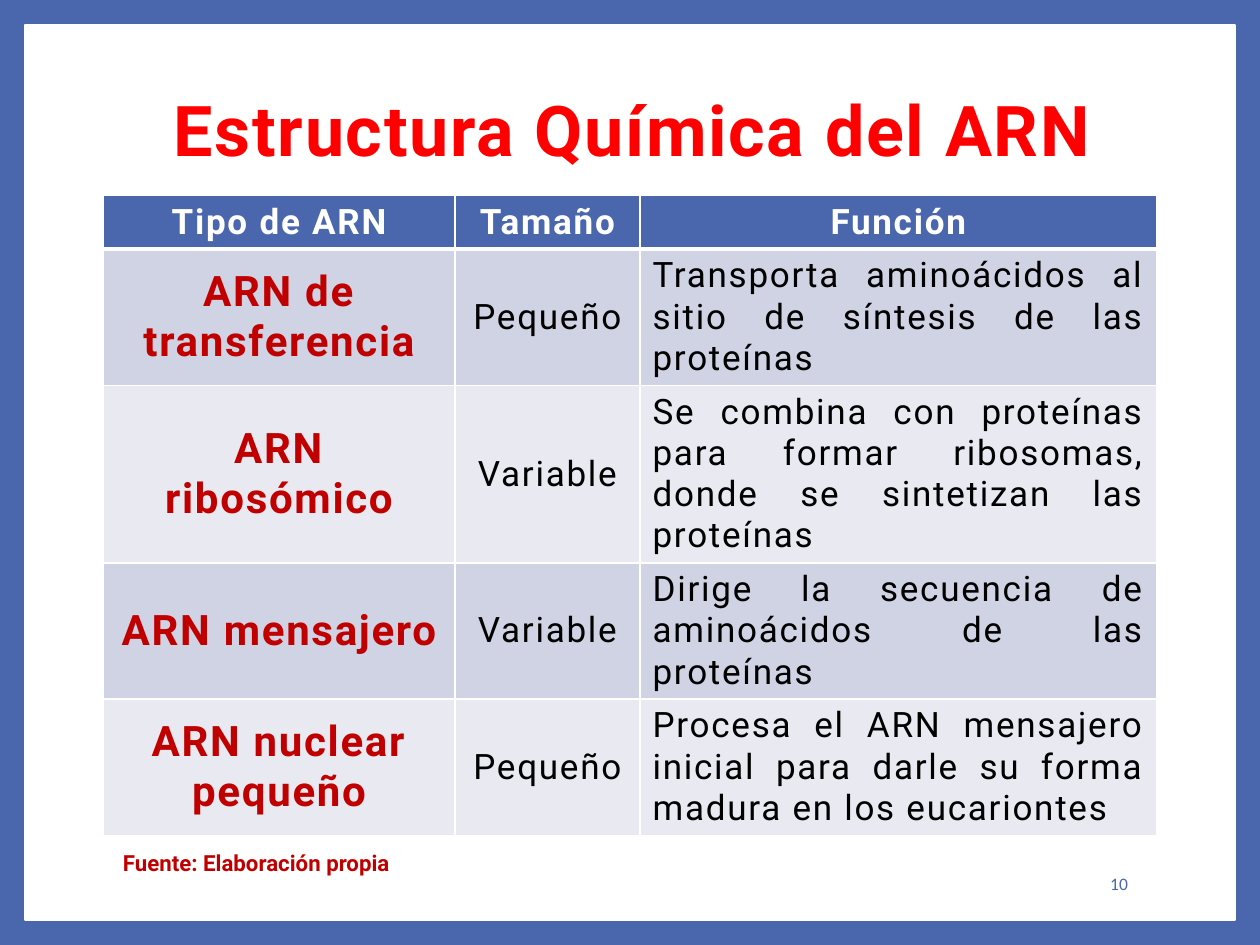
import pptx
import pptx.util
import pptx.dml.color
import pptx.enum.shapes
import pptx.enum.text
import pptx.oxml.ns
from lxml import etree

Inches, Pt = pptx.util.Inches, pptx.util.Pt
RGBColor = pptx.dml.color.RGBColor
ALIGN = pptx.enum.text.PP_ALIGN
ANCHOR = pptx.enum.text.MSO_ANCHOR
qn = pptx.oxml.ns.qn

BLUE = RGBColor(0x4A, 0x66, 0xAC)
WHITE = RGBColor(0xFF, 0xFF, 0xFF)
BLACK = RGBColor(0, 0, 0)
RED = RGBColor(0xFF, 0, 0)
DARK_RED = RGBColor(0xC0, 0, 0)
BANDS = [RGBColor(0xD0, 0xD3, 0xE3), RGBColor(0xE9, 0xEA, 0xF1)]

TITLE = "Estructura Química del ARN"
SOURCE = "Fuente: Elaboración propia"
PAGE_NUMBER = "10"
HEADINGS = ("Tipo de ARN", "Tamaño", "Función")
RNA_TYPES = [
    ("ARN de transferencia", "Pequeño",
     "Transporta aminoácidos al sitio de síntesis de las proteínas"),
    ("ARN ribosómico", "Variable",
     "Se combina con proteínas para formar ribosomas, donde se sintetizan las proteínas"),
    ("ARN mensajero", "Variable",
     "Dirige la secuencia de aminoácidos de las proteínas"),
    ("ARN nuclear pequeño", "Pequeño",
     "Procesa el ARN mensajero inicial para darle su forma madura en los eucariontes"),
]
COLUMN_WIDTHS = (2.79, 1.47, 4.1)
ROW_HEIGHTS = (0.41, 1.08, 1.41, 1.08, 1.08)

HEADING_FONT = {"name": "Roboto", "size": Pt(20), "bold": True}
COLUMN_FORMATS = [
    ({"name": "Roboto", "size": Pt(24), "bold": True}, DARK_RED, ALIGN.CENTER, ANCHOR.MIDDLE),
    ({"name": "Roboto", "size": Pt(20), "bold": False}, BLACK, ALIGN.CENTER, ANCHOR.MIDDLE),
    ({"name": "Roboto", "size": Pt(20), "bold": False}, BLACK, ALIGN.JUSTIFY, ANCHOR.TOP),
]


def write(frame, text, font, color, align, line_spacing=None, tracking=None):
    """Fill the frame with one formatted run; tracking is in points."""
    paragraph = frame.paragraphs[0]
    paragraph.alignment = align
    if line_spacing:
        paragraph.line_spacing = line_spacing
    run = paragraph.add_run()
    run.text = text
    for key, value in font.items():
        setattr(run.font, key, value)
    run.font.color.rgb = color
    if tracking:
        run.font._element.set("spc", str(tracking * 100))
    return run


def add_line(parent, tag, color, width):
    line = etree.SubElement(parent, qn(tag), w=str(Pt(width)))
    fill = etree.SubElement(line, qn("a:solidFill"))
    etree.SubElement(fill, qn("a:srgbClr"), val=str(color))
    return line


def add_label(slide, box, text, font, color, align, line_spacing=None):
    frame = slide.shapes.add_textbox(*map(Inches, box)).text_frame
    frame.word_wrap = True
    frame.vertical_anchor = ANCHOR.MIDDLE
    write(frame, text, font, color, align, line_spacing)


def add_title(slide):
    title = slide.shapes.title
    for key, value in {"left": 0.77, "top": 0.44, "width": 8.5, "height": 1.25}.items():
        setattr(title, key, Inches(value))
    title.text_frame.vertical_anchor = ANCHOR.MIDDLE
    run = write(title.text_frame, TITLE, {"name": "Roboto", "size": Pt(40), "bold": True},
                RED, ALIGN.CENTER, line_spacing=0.9, tracking=1)
    properties = run.font._element
    properties.insert(0, add_line(properties, "a:ln", RED, 1.25))


def add_rna_table(slide):
    table = slide.shapes.add_table(
        len(ROW_HEIGHTS), len(COLUMN_WIDTHS), Inches(0.82), Inches(1.55),
        Inches(sum(COLUMN_WIDTHS)), Inches(sum(ROW_HEIGHTS))).table
    for column, width in zip(table.columns, COLUMN_WIDTHS):
        column.width = Inches(width)
    for row, height in zip(table.rows, ROW_HEIGHTS):
        row.height = Inches(height)
    for r, texts in enumerate([HEADINGS] + RNA_TYPES):
        for c, text in enumerate(texts):
            cell = table.cell(r, c)
            if r == 0:
                font, color, align, anchor = HEADING_FONT, WHITE, ALIGN.CENTER, ANCHOR.MIDDLE
                fill = BLUE
            else:
                font, color, align, anchor = COLUMN_FORMATS[c]
                fill = BANDS[(r - 1) % 2]
            cell.vertical_anchor = anchor
            borders = {"L": 1, "R": 1, "T": 3 if r == 1 else 1, "B": 3 if r == 0 else 1}
            for side, width in borders.items():
                add_line(cell._tc.get_or_add_tcPr(), "a:ln" + side, WHITE, width)
            cell.fill.solid()
            cell.fill.fore_color.rgb = fill
            write(cell.text_frame, text, font, color, align, tracking=1)


def main():
    deck = pptx.Presentation()
    deck.slide_width, deck.slide_height = Inches(10), Inches(7.5)
    slide = deck.slides.add_slide(deck.slide_layouts[5])
    slide.background.fill.solid()
    slide.background.fill.fore_color.rgb = BLUE

    panel = slide.shapes.add_shape(pptx.enum.shapes.MSO_SHAPE.RECTANGLE,
                                   *map(Inches, (0.2, 0.2, 9.6, 7.1)))
    panel.shadow.inherit = False
    panel.fill.solid()
    panel.fill.fore_color.rgb = WHITE
    panel.line.color.rgb = WHITE
    panel.line.width = Pt(1)
    slide.shapes._spTree.insert(2, panel._element)  # behind the title

    add_rna_table(slide)
    add_title(slide)
    add_label(slide, (7.65, 6.81, 1.4, 0.4), PAGE_NUMBER,
              {"name": "Calibri", "size": Pt(10)}, BLUE, ALIGN.RIGHT)
    add_label(slide, (0.82, 6.72, 2.43, 0.29), SOURCE,
              {"name": "Roboto", "size": Pt(12.7), "bold": True}, DARK_RED, ALIGN.CENTER, 0.8)
    deck.save("out.pptx")


if __name__ == "__main__":
    main()
